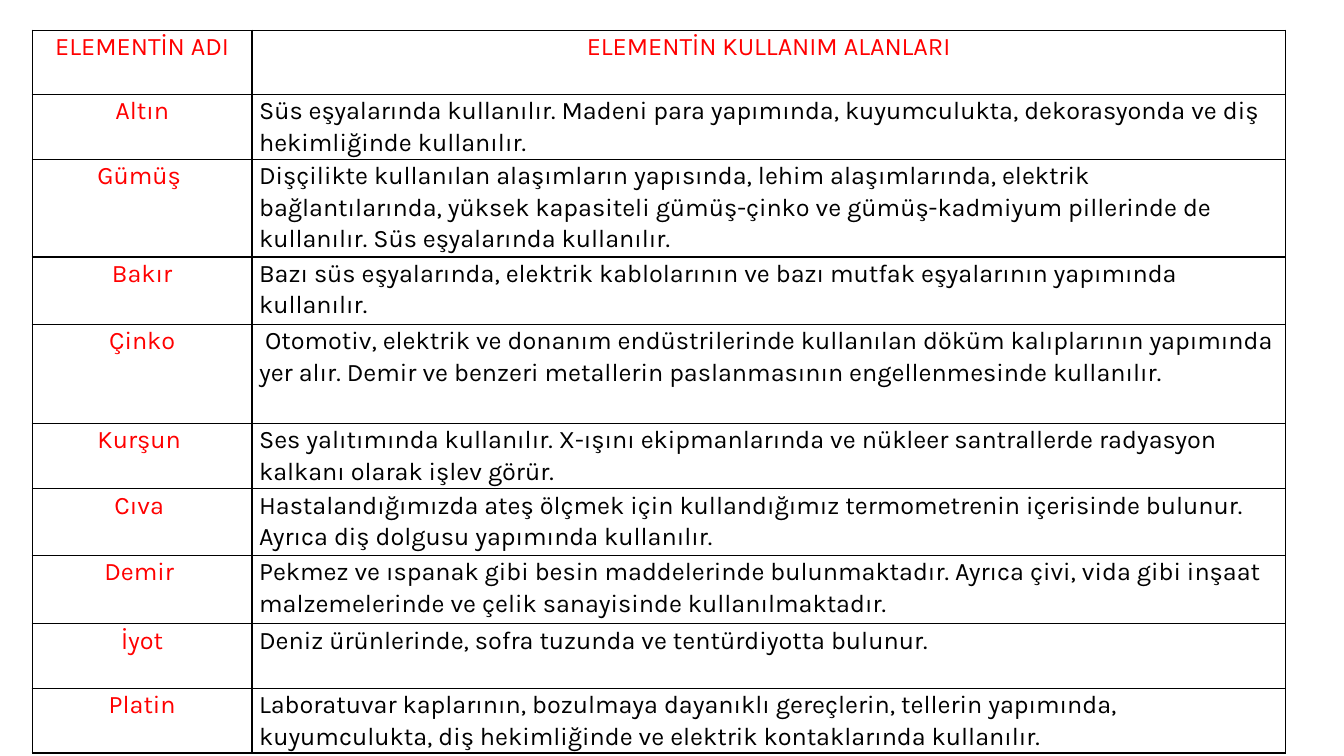
"""Build a slide with tables of elements and their uses."""
from dataclasses import dataclass

from lxml import etree
from pptx import Presentation
from pptx.dml.color import RGBColor
from pptx.enum.text import PP_ALIGN
from pptx.oxml.ns import qn
from pptx.util import Inches, Pt

CENTER = PP_ALIGN.CENTER
LEFT = PP_ALIGN.LEFT


@dataclass(frozen=True)
class Theme:
    """Hold the colours, font and sizes of the slide."""
    name: RGBColor = RGBColor(0xFF, 0, 0)
    body: RGBColor = RGBColor(0, 0, 0)
    cell: RGBColor = RGBColor(0xFF, 0xFF, 0xFF)
    border: str = "000000"
    border_width: int = Pt(1)
    font: str = "Karla"
    size: int = Pt(18)
    line_spacing: float = 1.07


THEME = Theme()
TABLE_LEFT = 0.32
COLUMN_WIDTHS = (2.18, 10.25)
HEADER = ("ELEMENTİN ADI", "ELEMENTİN KULLANIM ALANLARI")
ELEMENTS = [
    (0.64, "Altın", "Süs eşyalarında kullanılır. Madeni para yapımında, kuyumculukta, "
     "dekorasyonda ve diş hekimliğinde kullanılır."),
    (0.97, "Gümüş ", "Dişçilikte kullanılan alaşımların yapısında, lehim alaşımlarında, "
     "elektrik bağlantılarında, yüksek kapasiteli gümüş-çinko ve gümüş-kadmiyum "
     "pillerinde de kullanılır. Süs eşyalarında kullanılır."),
    (0.67, "Bakır", "Bazı süs eşyalarında, elektrik kablolarının ve bazı mutfak "
     "eşyalarının yapımında kullanılır."),
    (0.98, "Çinko", " Otomotiv, elektrik ve donanım endüstrilerinde kullanılan döküm "
     "kalıplarının yapımında yer alır. Demir ve benzeri metallerin paslanmasının "
     "engellenmesinde kullanılır."),
    (0.65, "Kurşun ", "Ses yalıtımında kullanılır. X-ışını ekipmanlarında ve nükleer "
     "santrallerde radyasyon kalkanı olarak işlev görür."),
    (0.66, "Cıva ", "Hastalandığımızda ateş ölçmek için kullandığımız termometrenin "
     "içerisinde bulunur. Ayrıca diş dolgusu yapımında kullanılır."),
    (0.68, "Demir ", "Pekmez ve ıspanak gibi besin maddelerinde bulunmaktadır. Ayrıca "
     "çivi, vida gibi inşaat malzemelerinde ve çelik sanayisinde kullanılmaktadır."),
    (0.64, "İyot", "Deniz ürünlerinde, sofra tuzunda ve tentürdiyotta bulunur."),
]
PLATINUM = (0.64, "Platin", "Laboratuvar kaplarının, bozulmaya dayanıklı gereçlerin, tellerin "
            "yapımında, kuyumculukta, diş hekimliğinde ve elektrik kontaklarında kullanılır.")


def write_text(cell, text, color=THEME.body, align=LEFT):
    """Write one formatted paragraph into a cell."""
    paragraph = cell.text_frame.paragraphs[0]
    paragraph.alignment = align
    paragraph.line_spacing = THEME.line_spacing
    run = paragraph.add_run()
    run.text = text
    run.font.name = THEME.font
    run.font.size = THEME.size
    run.font.color.rgb = color


def add_borders(cell):
    """Draw a solid line on all four sides of a cell."""
    properties = cell._tc.get_or_add_tcPr()
    for index, side in enumerate(("a:lnL", "a:lnR", "a:lnT", "a:lnB")):
        line = etree.Element(qn(side), w=str(THEME.border_width))
        fill = etree.SubElement(line, qn("a:solidFill"))
        etree.SubElement(fill, qn("a:srgbClr"), val=THEME.border)
        properties.insert(index, line)


def format_cell(cell):
    """Set the margins, fill and borders of a cell."""
    cell.margin_left = cell.margin_right = Inches(0.07)
    cell.margin_top = cell.margin_bottom = 0
    cell.fill.solid()
    cell.fill.fore_color.rgb = THEME.cell
    add_borders(cell)


def add_element_table(slide, top, rows, header_rows=0):
    """Add a table of rows given as height, element name and uses."""
    height = sum(row[0] for row in rows)
    frame = slide.shapes.add_table(
        len(rows), len(COLUMN_WIDTHS), Inches(TABLE_LEFT), Inches(top),
        Inches(sum(COLUMN_WIDTHS)), Inches(height))
    table = frame.table
    table.first_row = header_rows > 0
    table.horz_banding = False
    for column, width in zip(table.columns, COLUMN_WIDTHS):
        column.width = Inches(width)
    for row_index, (row_height, *texts) in enumerate(rows):
        table.rows[row_index].height = Inches(row_height)
        for column_index, text in enumerate(texts):
            cell = table.cell(row_index, column_index)
            format_cell(cell)
            if row_index < header_rows or column_index == 0:
                write_text(cell, text, color=THEME.name, align=CENTER)
            else:
                write_text(cell, text)
            if row_index < header_rows:
                cell.text_frame.paragraphs[0].runs[0].font.bold = False


def main():
    """Create and save the presentation."""
    presentation = Presentation()
    presentation.slide_width = Inches(13.33)
    presentation.slide_height = Inches(7.5)
    slide = presentation.slides.add_slide(presentation.slide_layouts[6])
    add_element_table(slide, 0.3, [(0.64, *HEADER), *ELEMENTS], header_rows=1)
    add_element_table(slide, 6.83, [PLATINUM])
    presentation.save("out.pptx")


if __name__ == "__main__":
    main()
